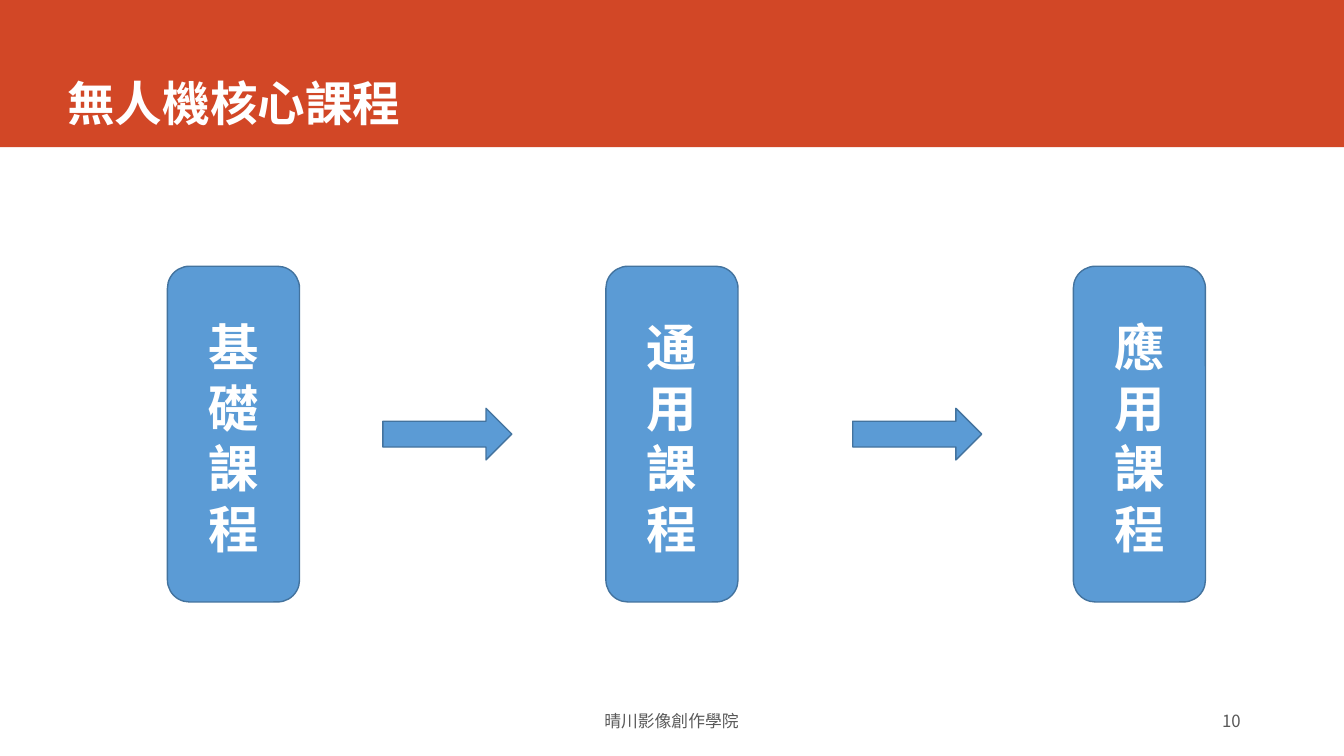
from dataclasses import dataclass

from lxml import etree
from pptx import Presentation
from pptx import util as u
from pptx.dml.color import RGBColor
from pptx.enum import shapes, text
from pptx.oxml import ns

ORANGE = RGBColor(0xD2, 0x47, 0x26)
BLUE = RGBColor(0x5B, 0x9B, 0xD5)
DARK_BLUE = RGBColor(0x43, 0x73, 0x9E)
GRAY = RGBColor(0x59, 0x59, 0x59)
WHITE = RGBColor(0xFF, 0xFF, 0xFF)
CJK_FONT = "Noto Sans CJK SC"
TITLE_FONT = "Lato"
LINE_PITCH = 1.2


@dataclass(frozen=True)
class Area:
    """A rectangle on the slide, in centimetres."""
    left: float
    top: float
    width: float
    height: float

    def lengths(self) -> tuple:
        return tuple(u.Cm(n) for n in (self.left, self.top, self.width, self.height))


@dataclass(frozen=True)
class Course:
    name: str
    left: float


COURSES = (Course("基礎課程", 4.22), Course("通用課程", 15.27), Course("應用課程", 27.05))
ARROW_LEFTS = (9.65, 21.49)


def write(shape, lines, *, size, color, font=CJK_FONT, bold=False,
          align=text.PP_ALIGN.LEFT, anchor=text.MSO_ANCHOR.MIDDLE, pitch=None):
    """Fill the shape with one paragraph per line."""
    frame = shape.text_frame
    frame.word_wrap = True
    frame.vertical_anchor = anchor
    for index, line in enumerate(lines):
        para = frame.add_paragraph() if index else frame.paragraphs[0]
        para.alignment = align
        if pitch:
            para.line_spacing = u.Pt(size * pitch)
        span = para.add_run()
        span.text = line
        span.font.size = u.Pt(size)
        span.font.bold = bold
        span.font.color.rgb = color
        span.font.name = font
        east_asian = etree.SubElement(span.font._element, ns.qn("a:ea"))
        east_asian.set("typeface", CJK_FONT)
    return frame


def add_block(page, kind, area: Area, fill: RGBColor, line: RGBColor | None = None):
    block = page.shapes.add_shape(kind, *area.lengths())
    block.shadow.inherit = False
    block.fill.solid()
    block.fill.fore_color.rgb = fill
    if line is None:
        block.line.fill.background()
    else:
        block.line.color.rgb = line
        block.line.width = u.Pt(1)
    return block


def add_label(page, area: Area, words: str, **look):
    return write(page.shapes.add_textbox(*area.lengths()), [words], **look)


def add_course(page, course: Course) -> None:
    """Draw a course box with its name running downwards."""
    box = add_block(page, shapes.MSO_SHAPE.ROUNDED_RECTANGLE,
                    Area(course.left, 6.71, 3.33, 8.46), BLUE, DARK_BLUE)
    frame = write(box, course.name, size=36, color=WHITE, bold=True,
                  align=text.PP_ALIGN.CENTER, pitch=LINE_PITCH)
    frame.margin_top = u.Cm(0.28)


def main() -> None:
    deck = Presentation()
    deck.slide_width, deck.slide_height = u.Cm(33.87), u.Cm(19.05)
    page = deck.slides.add_slide(deck.slide_layouts[6])

    add_block(page, shapes.MSO_SHAPE.RECTANGLE, Area(0, 0, 33.87, 3.71), ORANGE)
    title = add_label(page, Area(1.45, 0, 29.87, 3.35), "無人機核心課程", size=34,
                      color=WHITE, font=TITLE_FONT, bold=True,
                      anchor=text.MSO_ANCHOR.BOTTOM)
    title.margin_bottom = u.Cm(0.04)

    for course in COURSES:
        add_course(page, course)
    for left in ARROW_LEFTS:
        add_block(page, shapes.MSO_SHAPE.RIGHT_ARROW,
                  Area(left, 10.29, 3.25, 1.3), BLUE, DARK_BLUE)

    add_label(page, Area(12.9, 17.65, 8.05, 1.02), "晴川影像創作學院", size=12,
              color=GRAY, align=text.PP_ALIGN.CENTER)
    add_label(page, Area(22.43, 17.65, 9.09, 1.02), "10", size=12,
              color=GRAY, align=text.PP_ALIGN.RIGHT)
    deck.save("out.pptx")


if __name__ == "__main__":
    main()
